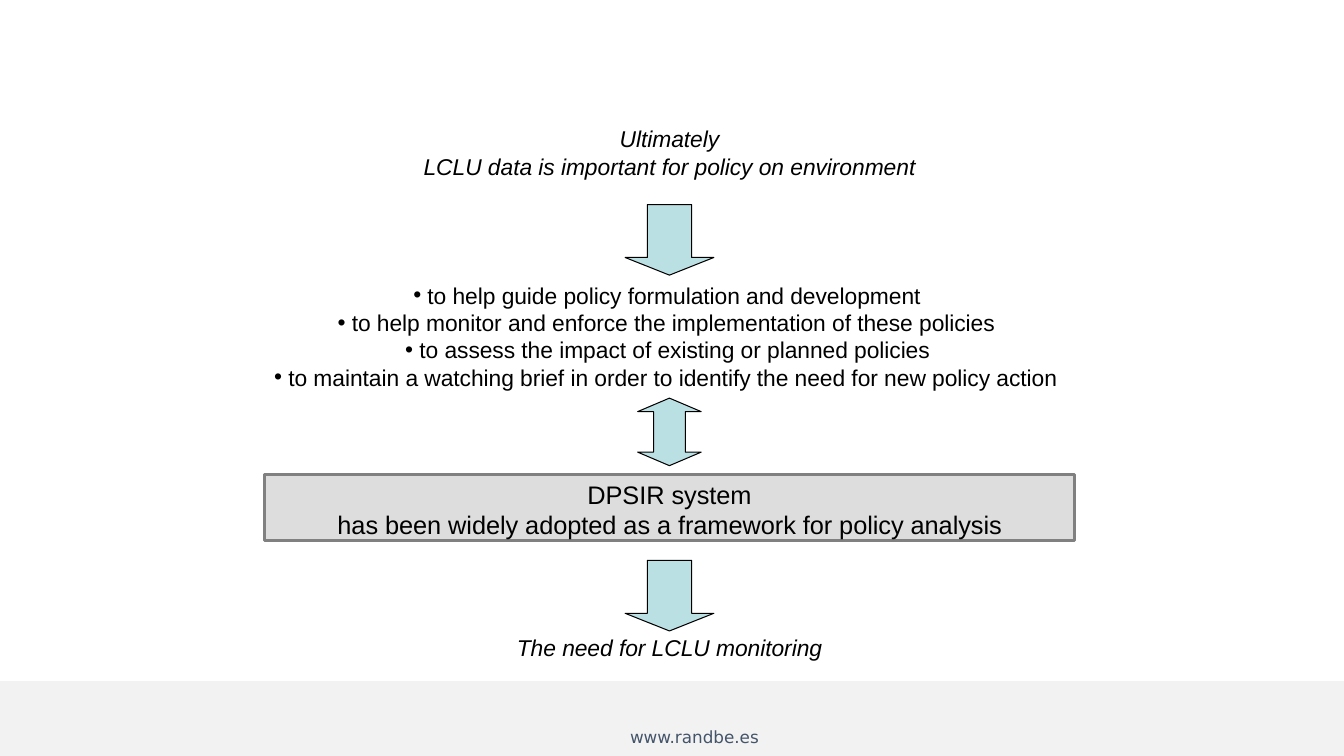
from dataclasses import dataclass

from lxml import etree
from pptx import Presentation
from pptx.dml.color import RGBColor
from pptx.enum.shapes import MSO_SHAPE
from pptx.enum.text import MSO_ANCHOR, PP_ALIGN
from pptx.oxml.ns import qn
from pptx.util import Inches, Pt


@dataclass(frozen=True)
class Theme:
    font: str = "Arial"
    footer_font: str = "DejaVu Sans"
    body_size: float = 16.3
    box_size: float = 18.1
    footer_size: float = 12
    ink: str = "000000"
    arrow: str = "BBE0E3"
    box: str = "DDDDDD"
    box_line: str = "808080"
    footer: str = "F2F2F2"
    footer_ink: str = "44546A"


THEME = Theme()
WIDTH, HEIGHT = 13.33, 7.5
CENTRE = 6.64  # axis of the flow
HANG = 0.14    # bullet hanging indent

# Policy aims with their left indents
AIMS = [
    ("to help guide policy formulation and development", 1.53),
    ("to help monitor and enforce the implementation of these policies", 0.78),
    ("to assess the impact of existing or planned policies", 1.45),
    ("to maintain a watching brief in order to identify the need for new policy action", 0.15),
]


def centred(top, width, height):
    return CENTRE - width / 2, top, width, height


def paint(sp, fill, line, weight):
    sp.shadow.inherit = False
    sp.fill.solid()
    sp.fill.fore_color.rgb = RGBColor.from_string(fill)
    sp.line.color.rgb = RGBColor.from_string(line)
    sp.line.width = Pt(weight)


def add_rect(slide, box, fill, line, weight):
    sp = slide.shapes.add_shape(MSO_SHAPE.RECTANGLE, *map(Inches, box))
    paint(sp, fill, line, weight)
    return sp


def format_run(r, size, font=THEME.font, color=THEME.ink, italic=False, spacing=-5):
    r.font.size = Pt(size)
    r.font.name = font
    r.font.italic = italic
    r.font.color.rgb = RGBColor.from_string(color)
    r.font._element.set("spc", str(spacing))


def write_lines(sp, lines, align=PP_ALIGN.CENTER, top_inset=0, side_inset=0, **style):
    tf = sp.text_frame
    tf.word_wrap = True
    tf.vertical_anchor = MSO_ANCHOR.TOP
    tf.margin_left = tf.margin_right = Inches(side_inset)
    tf.margin_top, tf.margin_bottom = Inches(top_inset), 0
    tf.text = "\n".join(lines)
    for p in tf.paragraphs:
        p.alignment = align
        for r in p.runs:
            format_run(r, **style)
    return tf


def add_text(slide, box, lines, **style):
    return write_lines(slide.shapes.add_textbox(*map(Inches, box)), lines, **style)


def add_bullet(p, indent):
    pPr = p._p.get_or_add_pPr()
    pPr.set("marL", str(Inches(indent)))
    pPr.set("indent", str(-Inches(HANG)))
    etree.SubElement(pPr, qn("a:buFont")).set("typeface", THEME.font)
    etree.SubElement(pPr, qn("a:buChar")).set("char", "•")


def add_down_arrow(slide, box):
    sp = slide.shapes.add_shape(MSO_SHAPE.DOWN_ARROW, *map(Inches, box))
    sp.adjustments[0], sp.adjustments[1] = 0.5, 0.25
    paint(sp, THEME.arrow, THEME.ink, 0.75)


def add_double_arrow(slide, box, head=0.2):
    left, top, width, height = box
    # Right half from the upper tip down, then mirrored back up
    right = [(0.5, 0), (1, head), (0.75, head),
             (0.75, 1 - head), (1, 1 - head), (0.5, 1)]
    mirrored = [(1 - x, y) for x, y in right[-2:0:-1]]
    points = [(Inches(left + x * width), Inches(top + y * height))
              for x, y in right + mirrored]
    builder = slide.shapes.build_freeform(*points[0])
    builder.add_line_segments(points[1:], close=True)
    paint(builder.convert_to_shape(), THEME.arrow, THEME.ink, 0.75)


def add_aims(slide, box):
    tf = add_text(slide, box, [text for text, _ in AIMS],
                  align=PP_ALIGN.LEFT, size=THEME.body_size)
    for p, (_, indent) in zip(tf.paragraphs, AIMS):
        add_bullet(p, indent)


def add_framework(slide, box):
    sp = add_rect(slide, box, THEME.box, THEME.box_line, 2.25)
    write_lines(sp, ["DPSIR system",
                     "has been widely adopted as a framework for policy analysis"],
                top_inset=0.04, size=THEME.box_size)


def add_footer(slide, box):
    left, top, _, _ = box
    add_rect(slide, box, THEME.footer, THEME.footer, 1)
    add_text(slide, (left + 6.15, top + 0.4, 1.72, 0.3), ["www.randbe.es"],
             align=PP_ALIGN.LEFT, top_inset=0.05, side_inset=0.1,
             size=THEME.footer_size, font=THEME.footer_font,
             color=THEME.footer_ink, spacing=0)


def build_flow_slide(prs):
    slide = prs.slides.add_slide(prs.slide_layouts[6])
    add_footer(slide, (0, 6.76, WIDTH, HEIGHT - 6.76))

    # Opening statement
    add_text(slide, centred(1.24, 5.2, 0.55),
             ["Ultimately", "LCLU data is important for policy on environment"],
             size=THEME.body_size, italic=True)

    # Aims and framework
    add_aims(slide, (2.71, 2.79, 8, 1.1))
    add_framework(slide, centred(4.71, 8.03, 0.65))

    # Arrows between the steps
    for top in (2.03, 5.56):
        add_down_arrow(slide, centred(top, 0.88, 0.7))
    add_double_arrow(slide, centred(3.95, 0.63, 0.67))

    # Conclusion
    add_text(slide, centred(6.29, 3.3, 0.28), ["The need for LCLU monitoring"],
             size=THEME.body_size, italic=True)


def main():
    prs = Presentation()
    prs.slide_width, prs.slide_height = Inches(WIDTH), Inches(HEIGHT)
    build_flow_slide(prs)
    prs.save("out.pptx")


if __name__ == "__main__":
    main()
